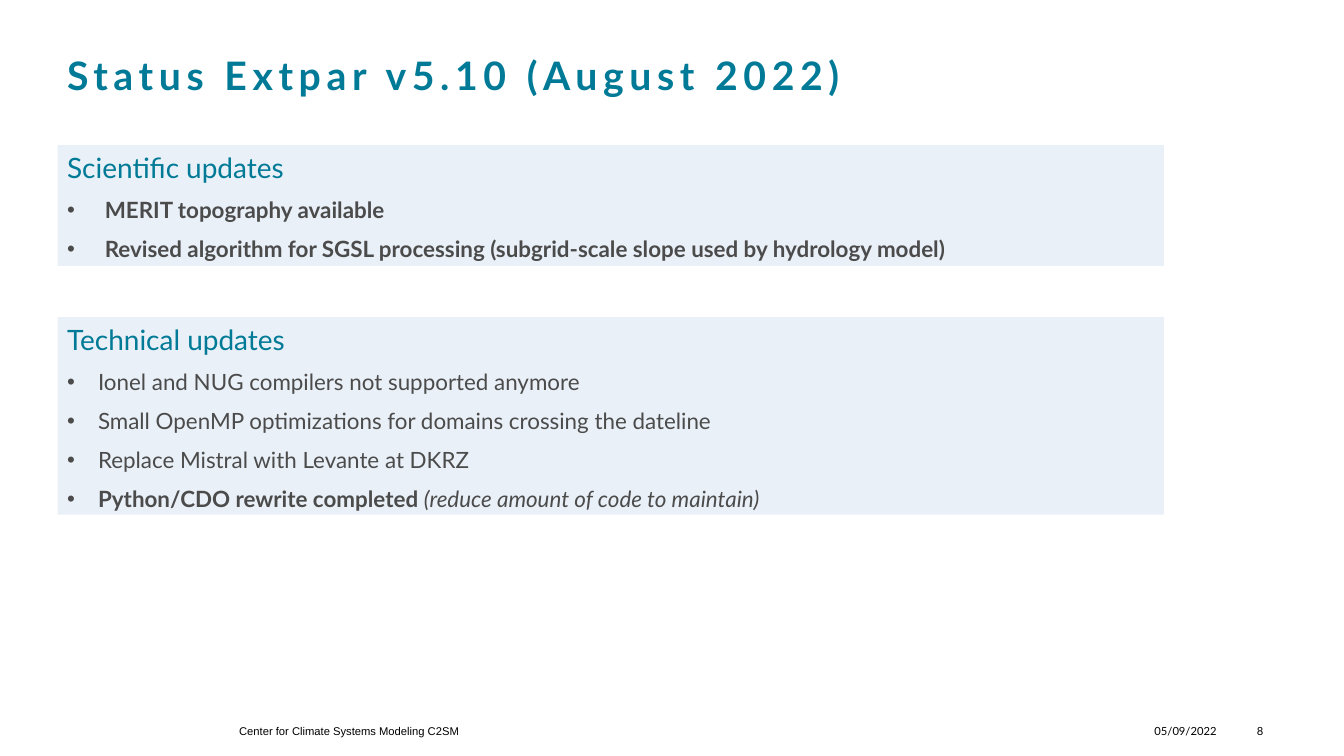
from pptx import Presentation
from pptx.dml.color import RGBColor
from pptx.enum.shapes import MSO_SHAPE as Shape
from pptx.enum.text import MSO_ANCHOR as Anchor, MSO_AUTO_SIZE as AutoSize, PP_ALIGN as Align
from pptx.oxml.ns import qn
from pptx.util import Inches, Pt
from lxml.etree import SubElement

TEAL = RGBColor(0x00, 0x7A, 0x96)
GRAY = RGBColor(0x4B, 0x4B, 0x4B)
BLACK = RGBColor(0x00, 0x00, 0x00)
PANEL_BLUE = RGBColor(0x72, 0x9F, 0xCF)

LEFT, WIDTH = 0.43, 8.23
PANEL_OPACITY = 15

SCIENTIFIC = [
    [("MERIT topography available", True, False)],
    [("Revised algorithm for SGSL processing (subgrid-scale slope used by hydrology model)", True, False)],
]
TECHNICAL = [
    [("Ionel and NUG compilers not supported anymore", False, False)],
    [("Small OpenMP optimizations for domains crossing the dateline", False, False)],
    [("Replace Mistral with Levante at DKRZ", False, False)],
    [("Python/CDO rewrite completed ", True, False), ("(reduce amount of code to maintain)", False, True)],
]


def style(span, size, color, name="Lato", bold=False, italic=False):
    font = span.font
    font.name, font.size, font.bold, font.italic = name, Pt(size), bold, italic
    font.color.rgb = color


def set_frame(frame, side, end, anchor, auto_size=AutoSize.NONE):
    frame.word_wrap = True
    frame.auto_size = auto_size
    frame.vertical_anchor = anchor
    frame.margin_left = frame.margin_right = Inches(side)
    frame.margin_top = frame.margin_bottom = Inches(end)


def add_bullet(para, indent):
    props = para._p.get_or_add_pPr()
    props.set("marL", str(Inches(indent)))
    props.set("indent", str(-Inches(indent)))
    SubElement(props, qn("a:buFont"), typeface="Arial")
    SubElement(props, qn("a:buChar"), char="•")


def add_title(page, left, top, width, height, text):
    box = page.shapes.add_textbox(Inches(left), Inches(top), Inches(width), Inches(height))
    set_frame(box.text_frame, 0.07, 0.04, Anchor.TOP, AutoSize.SHAPE_TO_FIT_TEXT)
    box.text_frame.text = text
    span = box.text_frame.paragraphs[0].runs[0]
    style(span, 21, TEAL, bold=True)
    span._r.get_or_add_rPr().set("spc", "300")


def add_panel(page, left, top, width, height, heading, items, indent):
    panel = page.shapes.add_shape(
        Shape.RECTANGLE, Inches(left), Inches(top), Inches(width), Inches(height))
    panel.shadow.inherit = False
    panel.line.fill.background()
    panel.fill.solid()
    panel.fill.fore_color.rgb = PANEL_BLUE
    color = panel._element.spPr.find(qn("a:solidFill"))[0]
    SubElement(color, qn("a:alpha"), val=str(PANEL_OPACITY * 1000))

    frame = panel.text_frame
    set_frame(frame, 0.07, 0.04, Anchor.TOP, AutoSize.SHAPE_TO_FIT_TEXT)
    frame.text = heading
    frame.paragraphs[0].alignment = Align.LEFT
    style(frame.paragraphs[0].runs[0], 15, TEAL)
    for item in items:
        para = frame.add_paragraph()
        para.alignment = Align.LEFT
        para.space_before = Pt(6.5)
        add_bullet(para, indent)
        for text, bold, italic in item:
            span = para.add_run()
            span.text = text
            style(span, 12, GRAY, bold=bold, italic=italic)


def add_footer(page, top, height):
    parts = [
        (1.78, 4.43, "Center for Climate Systems Modeling C2SM", "Arial", Align.LEFT),
        (8.59, 0.5, "05/09/2022", "Lato", Align.LEFT),
        (9.14, 0.26, "8", "Lato", Align.RIGHT),
    ]
    for left, width, text, name, align in parts:
        box = page.shapes.add_textbox(Inches(left), Inches(top), Inches(width), Inches(height))
        set_frame(box.text_frame, 0, 0, Anchor.MIDDLE)
        box.text_frame.text = text
        para = box.text_frame.paragraphs[0]
        para.alignment = align
        style(para.runs[0], 6, BLACK, name=name)


def main():
    deck = Presentation()
    deck.slide_width = Inches(10)
    deck.slide_height = deck.slide_width * 9 // 16
    page = deck.slides.add_slide(deck.slide_layouts[6])
    add_footer(page, 5.35, 0.18)
    add_panel(page, LEFT, 2.36, WIDTH, 1.47, "Technical updates", TECHNICAL, 0.23)
    add_title(page, LEFT, 0.34, WIDTH, 0.43, "Status Extpar v5.10 (August 2022)")
    add_panel(page, LEFT, 1.08, WIDTH, 0.9, "Scientific updates", SCIENTIFIC, 0.28)
    deck.save("out.pptx")


if __name__ == "__main__":
    main()
